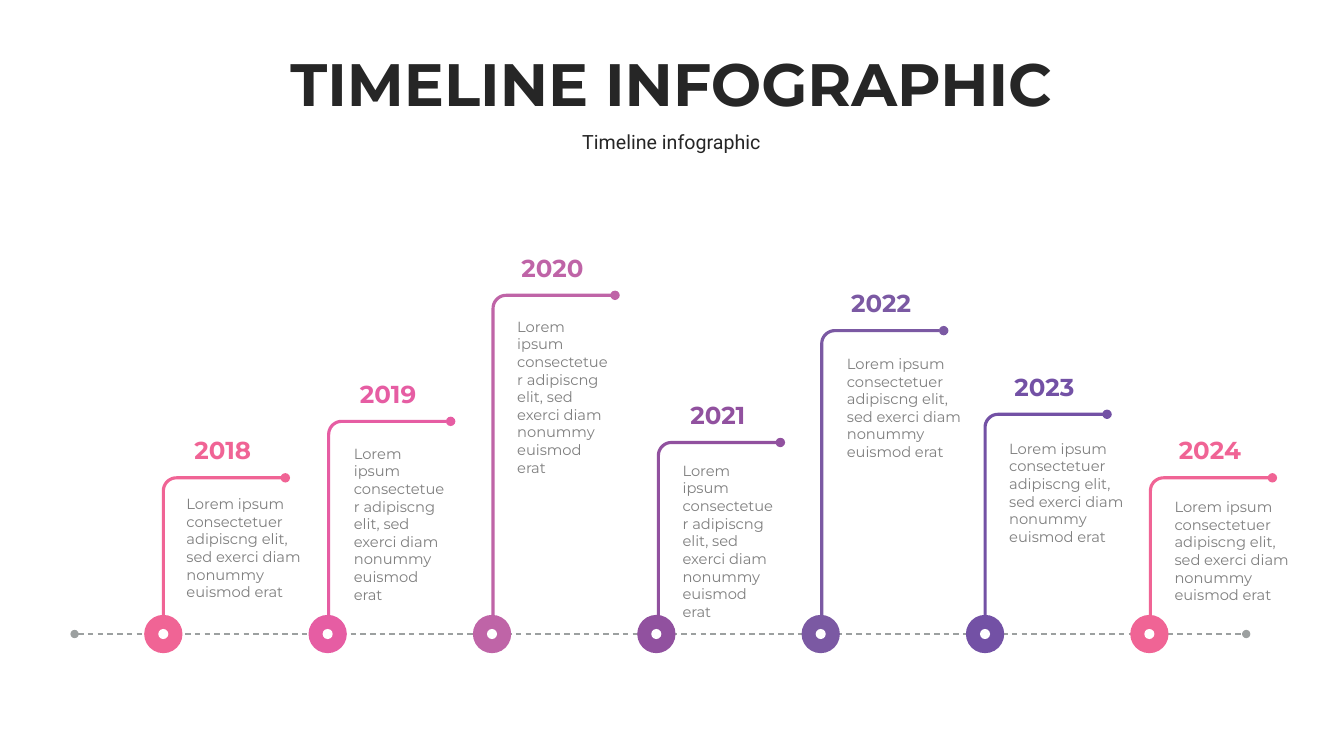
import dataclasses
import math

import lxml.etree
import pptx
import pptx.dml.color
import pptx.enum.dml
import pptx.enum.shapes
import pptx.enum.text
import pptx.oxml.ns
import pptx.shapes.autoshape
import pptx.shapes.connector
import pptx.shapes.shapetree
import pptx.text.text
import pptx.util

RGBColor = pptx.dml.color.RGBColor
Anchor = pptx.enum.text.MSO_ANCHOR
Align = pptx.enum.text.PP_ALIGN
AutoSize = pptx.enum.text.MSO_AUTO_SIZE
Shapes = pptx.shapes.shapetree.SlideShapes

ROSE = RGBColor(0xF0, 0x64, 0x95)
PINK = RGBColor(0xE6, 0x5D, 0xA3)
ORCHID = RGBColor(0xBF, 0x64, 0xA7)
PURPLE = RGBColor(0x91, 0x51, 0x9F)
VIOLET = RGBColor(0x7B, 0x59, 0xA3)
INDIGO = RGBColor(0x73, 0x51, 0xA5)
GREY = RGBColor(0x80, 0x80, 0x80)
AXIS_GREY = RGBColor(0x9C, 0xA0, 0xA0)
INK = RGBColor(0x26, 0x26, 0x26)
WHITE = RGBColor(0xFF, 0xFF, 0xFF)

EMU_PER_PX = 9144
AXIS_Y = 629
FIRST_RING_X = 162
RING_STEP = 163
STEM_FOOT = 616
STEM_REACH = 121
CORNER_RADIUS = 13
NOTE = "Lorem ipsum consectetuer adipiscng elit, sed exerci diam nonummy euismod erat"


@dataclasses.dataclass(frozen=True)
class Milestone:
    year: str
    color: RGBColor
    stem_x: int
    stem_top: int
    note_x: int
    note_y: int
    note_width: int


MILESTONES = [
    Milestone("2018", ROSE, 162, 474, 182, 488, 124),
    Milestone("2019", PINK, 326, 418, 348, 438, 101),
    Milestone("2020", ORCHID, 489, 293, 510, 312, 101),
    Milestone("2021", PURPLE, 653, 439, 674, 455, 101),
    Milestone("2022", VIOLET, 815, 328, 837, 349, 124),
    Milestone("2023", INDIGO, 977, 411, 998, 433, 124),
    Milestone("2024", ROSE, 1141, 474, 1162, 491, 124),
]


def emu(px: float) -> int:
    return round(px * EMU_PER_PX)


def add_text(
    shapes: Shapes,
    text: str,
    *,
    left: int,
    top: int,
    width: int,
    height: int,
    size: float,
    color: RGBColor,
    font: str = "Montserrat",
    bold: bool = False,
    align: Align = Align.CENTER,
    anchor: Anchor = Anchor.MIDDLE,
    inset: int = 3,
    wrap: bool = True,
    auto_size: AutoSize = AutoSize.SHAPE_TO_FIT_TEXT,
) -> pptx.text.text._Paragraph:
    box = shapes.add_textbox(emu(left), emu(top), emu(width), emu(height))
    frame = box.text_frame
    frame.word_wrap = wrap
    frame.auto_size = auto_size
    frame.vertical_anchor = anchor
    frame.margin_left = frame.margin_right = emu(inset)
    frame.margin_top = frame.margin_bottom = emu(inset)
    para = frame.paragraphs[0]
    para.alignment = align
    span = para.add_run()
    span.text = text
    span.font.name = font
    span.font.size = pptx.util.Pt(size)
    span.font.bold = bold
    span.font.color.rgb = color
    return para


def style_line(
    shape: pptx.shapes.autoshape.Shape | pptx.shapes.connector.Connector,
    color: RGBColor,
    weight: float,
    ends: tuple[str, ...],
) -> None:
    shape.line.color.rgb = color
    shape.line.width = pptx.util.Pt(weight)
    for end in ends:
        tag = pptx.oxml.ns.qn(f"a:{end}")
        lxml.etree.SubElement(shape.get_or_add_ln(), tag, type="oval")


def add_axis(shapes: Shapes) -> None:
    axis = shapes.add_connector(
        pptx.enum.shapes.MSO_CONNECTOR.STRAIGHT,
        emu(74), emu(AXIS_Y), emu(1236), emu(AXIS_Y),
    )
    axis.line.dash_style = pptx.enum.dml.MSO_LINE.DASH
    style_line(axis, AXIS_GREY, 1, ("headEnd", "tailEnd"))
    lxml.etree.SubElement(axis.element.spPr, pptx.oxml.ns.qn("a:effectLst"))


def add_stem(shapes: Shapes, milestone: Milestone) -> None:
    left, top = milestone.stem_x, milestone.stem_top
    corner = [
        (
            emu(left + CORNER_RADIUS * (1 - math.cos(math.radians(angle)))),
            emu(top + CORNER_RADIUS * (1 - math.sin(math.radians(angle)))),
        )
        for angle in range(0, 91, 10)
    ]
    builder = shapes.build_freeform(emu(left), emu(STEM_FOOT))
    builder.add_line_segments(
        [*corner, (emu(left + STEM_REACH), emu(top))], close=False
    )
    stem = builder.convert_to_shape()
    stem.shadow.inherit = False
    stem.fill.background()
    style_line(stem, milestone.color, 2.25, ("tailEnd",))


def add_disc(shapes: Shapes, center_x: int, diameter: int, color: RGBColor) -> None:
    disc = shapes.add_shape(
        pptx.enum.shapes.MSO_SHAPE.OVAL,
        emu(center_x - diameter / 2), emu(AXIS_Y - diameter / 2),
        emu(diameter), emu(diameter),
    )
    disc.shadow.inherit = False
    disc.fill.solid()
    disc.fill.fore_color.rgb = color
    disc.line.fill.background()


def add_milestone(shapes: Shapes, milestone: Milestone, ring_x: int) -> None:
    add_disc(shapes, ring_x, 38, milestone.color)
    add_disc(shapes, ring_x, 10, WHITE)
    add_text(
        shapes, milestone.year,
        left=milestone.stem_x - 4, top=milestone.stem_top - 45,
        width=126, height=35, size=17.5, color=milestone.color, bold=True,
    )
    add_text(
        shapes, NOTE,
        left=milestone.note_x, top=milestone.note_y,
        width=milestone.note_width, height=112, size=10.5, color=GREY,
        align=Align.LEFT, anchor=Anchor.TOP,
    )


def main() -> None:
    """Build the timeline slide and save it."""
    deck = pptx.Presentation()
    deck.slide_width, deck.slide_height = emu(1333), emu(750)
    page = deck.slides.add_slide(deck.slide_layouts[6])
    for milestone in MILESTONES:
        add_stem(page.shapes, milestone)
    add_axis(page.shapes)
    for index, milestone in enumerate(MILESTONES):
        add_milestone(page.shapes, milestone, FIRST_RING_X + index * RING_STEP)
    subtitle = add_text(
        page.shapes, "Timeline infographic",
        left=56, top=129, width=1220, height=25, size=14, color=INK,
        font="Roboto", inset=0, wrap=False, auto_size=AutoSize.NONE,
    )
    subtitle.line_spacing = 0.9
    subtitle.space_before = pptx.util.Pt(10)
    title = add_text(
        page.shapes, "TIMELINE INFOGRAPHIC",
        left=56, top=50, width=1220, height=72, size=42.7, color=INK,
        bold=True, inset=0, auto_size=AutoSize.NONE,
    )
    title.line_spacing = 0.9
    deck.save("out.pptx")


if __name__ == "__main__":
    main()
